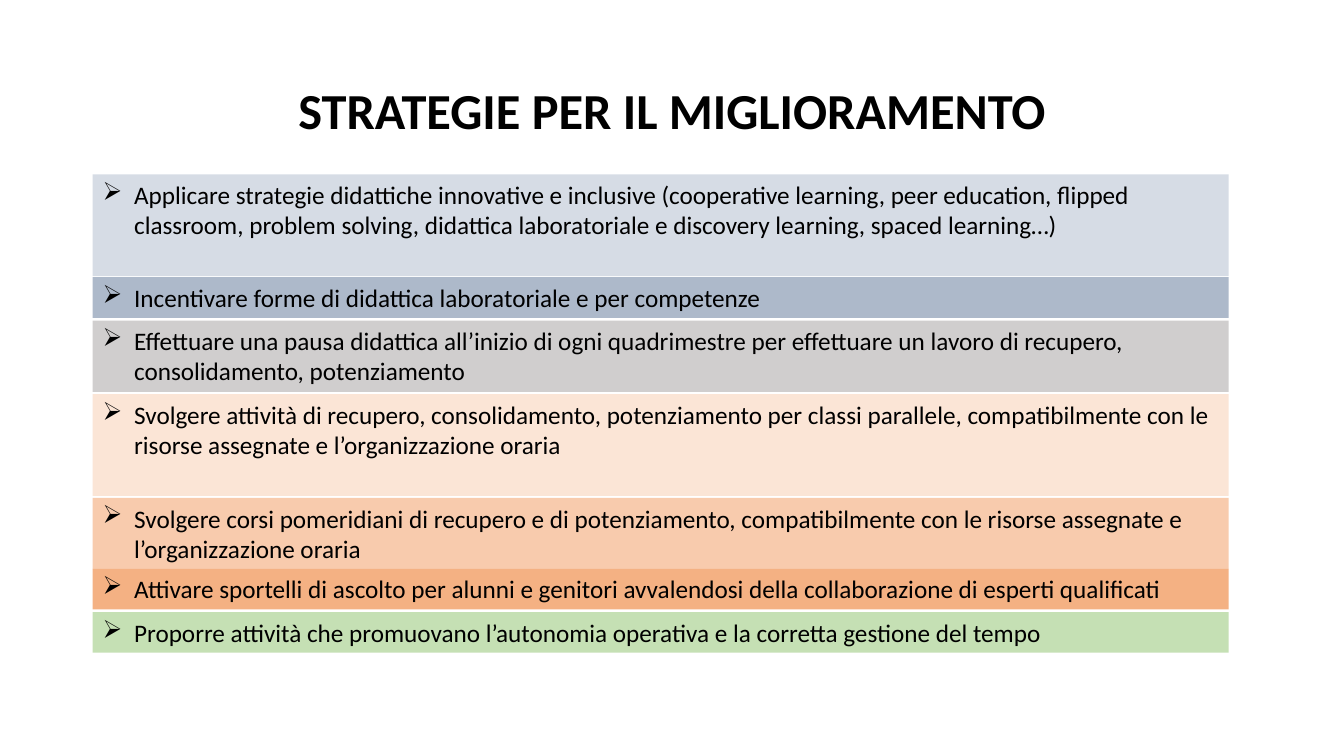
from dataclasses import dataclass

import lxml.etree
import pptx
import pptx.dml.color
import pptx.enum.shapes
import pptx.enum.text
import pptx.oxml.ns
import pptx.util

Pt = pptx.util.Pt


@dataclass(frozen=True)
class Theme:
    font: str = "Calibri"
    text: str = "000000"
    title_size: int = 36
    body_size: int = 18
    light_blue: str = "D6DCE5"
    blue: str = "ADB9CA"
    grey: str = "D0CECE"
    pale_orange: str = "FBE5D6"
    light_orange: str = "F8CBAD"
    orange: str = "F4B183"
    green: str = "C5E0B4"


THEME = Theme()

# Layout in points
LEFT = 66.24
BAND_WIDTH = 811.44
LINE_HEIGHT = 21.82
BAND_PADDING = 7.27
BULLET_INDENT = 22.5

# Top, height in text lines, fill and wording of each band
STRATEGIES = [
    (124.56, 3, THEME.light_blue,
     "Applicare strategie didattiche innovative e inclusive (cooperative learning, "
     "peer education, flipped classroom, problem solving, didattica laboratoriale e "
     "discovery learning, spaced learning…)"),
    (198, 1, THEME.blue,
     "Incentivare forme di didattica laboratoriale e per competenze"),
    (229, 2, THEME.grey,
     "Effettuare una pausa didattica all’inizio di ogni quadrimestre per effettuare "
     "un lavoro di recupero, consolidamento, potenziamento"),
    (281.5, 3, THEME.pale_orange,
     "Svolgere attività di recupero, consolidamento, potenziamento per classi "
     "parallele, compatibilmente con le risorse assegnate e l’organizzazione oraria"),
    (355.7, 2, THEME.light_orange,
     "Svolgere corsi pomeridiani di recupero e di potenziamento, compatibilmente "
     "con le risorse assegnate e l’organizzazione oraria"),
    (406.3, 1, THEME.orange,
     "Attivare sportelli di ascolto per alunni e genitori avvalendosi della "
     "collaborazione di esperti qualificati"),
    (437.2, 1, THEME.green,
     "Proporre attività che promuovano l’autonomia operativa e la corretta "
     "gestione del tempo"),
]


def color(value):
    return pptx.dml.color.RGBColor.from_string(value)


def write_text(box, text, size, align, anchor, bold=False):
    frame = box.text_frame
    frame.word_wrap = True
    frame.vertical_anchor = anchor
    frame.text = text
    para = frame.paragraphs[0]
    para.alignment = align
    for span in para.runs:
        span.font.name = THEME.font
        span.font.size = Pt(size)
        span.font.bold = bold
        span.font.color.rgb = color(THEME.text)
    return para


def add_bullet(para):
    properties = para._p.get_or_add_pPr()
    properties.set("marL", str(Pt(BULLET_INDENT)))
    properties.set("indent", str(-Pt(BULLET_INDENT)))
    bullet = lxml.etree.SubElement(properties, pptx.oxml.ns.qn("a:buChar"))
    bullet.set("char", "➢")


def add_title(page, text):
    box = page.shapes.add_textbox(Pt(LEFT), Pt(28.8), Pt(828), Pt(104.4))
    para = write_text(box, text, THEME.title_size, pptx.enum.text.PP_ALIGN.CENTER,
                      pptx.enum.text.MSO_ANCHOR.MIDDLE, bold=True)
    para.line_spacing = 0.9


def add_band(page, top, lines, fill, text):
    height = BAND_PADDING + lines * LINE_HEIGHT
    band = page.shapes.add_shape(pptx.enum.shapes.MSO_SHAPE.RECTANGLE,
                                 Pt(LEFT), Pt(top), Pt(BAND_WIDTH), Pt(height))
    band.shadow.inherit = False
    band.fill.solid()
    band.fill.fore_color.rgb = color(fill)
    band.line.fill.background()
    para = write_text(band, text, THEME.body_size, pptx.enum.text.PP_ALIGN.LEFT,
                      pptx.enum.text.MSO_ANCHOR.TOP)
    add_bullet(para)


def main():
    deck = pptx.Presentation()
    deck.slide_width, deck.slide_height = Pt(960), Pt(540)
    page = deck.slides.add_slide(deck.slide_layouts[6])

    # Heading
    add_title(page, "STRATEGIE PER IL MIGLIORAMENTO")

    # Coloured strategy bands
    for top, lines, fill, text in STRATEGIES:
        add_band(page, top, lines, fill, text)

    deck.save("out.pptx")


if __name__ == "__main__":
    main()
